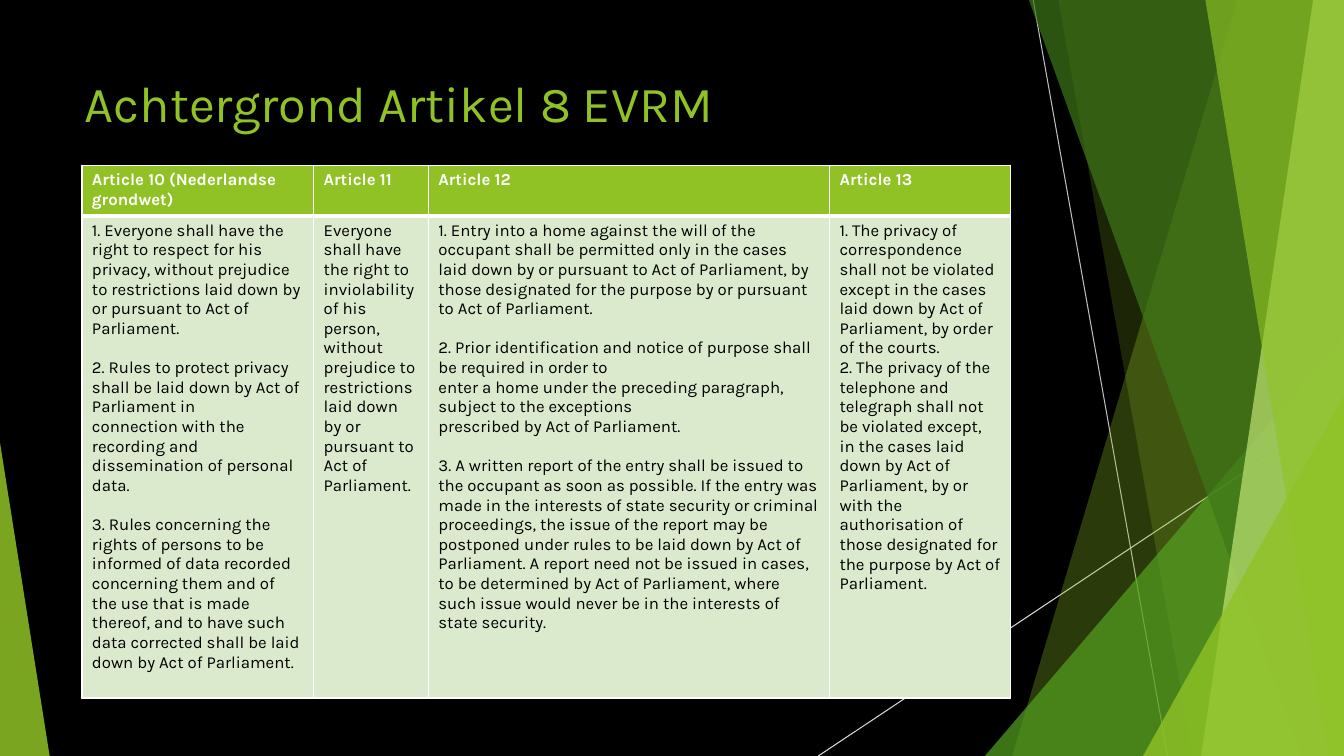
import dataclasses

import pptx
import pptx.dml.color
import pptx.enum.dml
import pptx.enum.shapes
import pptx.enum.text
import pptx.oxml
import pptx.oxml.ns
import pptx.util

Pt = pptx.util.Pt
WIDTH, HEIGHT = 960, 540


@dataclasses.dataclass(frozen=True)
class Theme:
    font: str = "Karla"
    title_size: int = 36
    table_size: int = 12
    background: str = "000000"
    accent: str = "90C226"
    mid_green: str = "54A021"
    dark_green: str = "3F7819"
    light_green: str = "C0E474"
    steep_line: str = "BFBFBF"
    flat_line: str = "D9D9D9"
    white: str = "FFFFFF"
    ink: str = "000000"
    body_fill: str = "DBE9CD"


def rgb(color):
    return pptx.dml.color.RGBColor.from_string(color)


def write_paragraph(paragraph, text, *, font, size, color, bold=False, gap=0):
    paragraph.space_before = Pt(gap)
    run = paragraph.add_run()
    run.text = text
    run.font.name = font
    run.font.size = Pt(size)
    run.font.bold = bold
    run.font.color.rgb = rgb(color)


class Deck:
    def __init__(self, theme):
        self.theme = theme
        self.presentation = pptx.Presentation()
        self.presentation.slide_width = Pt(WIDTH)
        self.presentation.slide_height = Pt(HEIGHT)
        self.slide = self.presentation.slides.add_slide(self.presentation.slide_layouts[6])
        self.slide.background.fill.solid()
        self.slide.background.fill.fore_color.rgb = rgb(theme.background)

    def line(self, start, end, color):
        connector = self.slide.shapes.add_connector(
            pptx.enum.shapes.MSO_CONNECTOR.STRAIGHT, *map(Pt, start + end))
        connector.line.color.rgb = rgb(color)
        connector.line.width = Pt(0.75)
        connector._element.spPr.append(pptx.oxml.parse_xml(
            f'<a:effectLst {pptx.oxml.ns.nsdecls("a")}/>'))

    def tint(self, shape, color, opacity):
        """Give a shape a see-through fill, with no outline or shadow."""
        shape.shadow.inherit = False
        shape.line.fill.background()
        shape.fill.solid()
        shape.fill.fore_color.rgb = rgb(color)
        solid_color = shape._element.spPr.find(".//" + pptx.oxml.ns.qn("a:srgbClr"))
        solid_color.append(pptx.oxml.parse_xml(
            f'<a:alpha {pptx.oxml.ns.nsdecls("a")} val="{opacity * 1000}"/>'))

    def facet(self, top_left, bottom_left, color, opacity):
        """Fill the area from a slanted left edge to the right side of the slide."""
        outline = self.slide.shapes.build_freeform(Pt(top_left), 0, scale=1)
        outline.add_line_segments(
            [(Pt(WIDTH), 0), (Pt(WIDTH), Pt(HEIGHT)), (Pt(bottom_left), Pt(HEIGHT))])
        self.tint(outline.convert_to_shape(), color, opacity)

    def corner(self, left, top, width, apex, color, opacity):
        """Draw a triangle standing on the bottom edge; apex 0 is left, 1 is right."""
        triangle = self.slide.shapes.add_shape(
            pptx.enum.shapes.MSO_SHAPE.ISOSCELES_TRIANGLE,
            Pt(left), Pt(top), Pt(width), Pt(HEIGHT - top))
        triangle.adjustments[0] = apex
        self.tint(triangle, color, opacity)

    def title(self, text, left, top, width, height):
        frame = self.slide.shapes.add_textbox(
            Pt(left), Pt(top), Pt(width), Pt(height)).text_frame
        frame.word_wrap = True
        frame.vertical_anchor = pptx.enum.text.MSO_ANCHOR.TOP
        write_paragraph(frame.paragraphs[0], text, font=self.theme.font,
                        size=self.theme.title_size, color=self.theme.accent)

    def cell(self, cell, blocks, fill, borders, **text_format):
        """Fill a cell with blocks of lines, one empty line's height between blocks."""
        cell.fill.solid()
        cell.fill.fore_color.rgb = rgb(fill)
        properties = cell._tc.get_or_add_tcPr()
        for position, (side, width) in enumerate(zip("LRTB", borders)):
            properties.insert(position, pptx.oxml.parse_xml(
                f'<a:ln{side} {pptx.oxml.ns.nsdecls("a")} w="{Pt(width)}"><a:solidFill>'
                f'<a:srgbClr val="{self.theme.white}"/></a:solidFill></a:ln{side}>'))
        paragraph = cell.text_frame.paragraphs[0]
        for block_index, block in enumerate(blocks):
            for line_index, text in enumerate(block):
                if block_index or line_index:
                    paragraph = cell.text_frame.add_paragraph()
                gap = 14 if block_index and not line_index else 0
                write_paragraph(paragraph, text, font=self.theme.font,
                                size=self.theme.table_size, gap=gap, **text_format)

    def table(self, articles, left, top, widths, heights):
        theme = self.theme
        table = self.slide.shapes.add_table(
            2, len(articles), Pt(left), Pt(top), Pt(sum(widths)), Pt(sum(heights))).table
        table.first_row = table.horz_banding = False
        for row, height in zip(table.rows, heights):
            row.height = Pt(height)
        for index, (heading, blocks) in enumerate(articles.items()):
            table.columns[index].width = Pt(widths[index])
            self.cell(table.cell(0, index), [[heading]], theme.accent, (1, 1, 1, 3),
                      color=theme.white, bold=True)
            self.cell(table.cell(1, index), blocks, theme.body_fill, (1, 1, 3, 1),
                      color=theme.ink)


ARTICLES = {
    "Article 10 (Nederlandse grondwet)": [
        ["1. Everyone shall have the right to respect for his privacy, without prejudice",
         "to restrictions laid down by or pursuant to Act of Parliament."],
        ["2. Rules to protect privacy shall be laid down by Act of Parliament in",
         "connection with the recording and dissemination of personal data."],
        ["3. Rules concerning the rights of persons to be informed of data recorded",
         "concerning them and of the use that is made thereof, and to have such",
         "data corrected shall be laid down by Act of Parliament."],
    ],
    "Article 11": [
        ["Everyone shall have the right to inviolability of his person, without",
         "prejudice to restrictions laid down by or pursuant to Act of Parliament."],
    ],
    "Article 12": [
        ["1. Entry into a home against the will of the occupant shall be permitted only in "
         "the cases laid down by or pursuant to Act of Parliament, by those designated for "
         "the purpose by or pursuant to Act of Parliament."],
        ["2. Prior identification and notice of purpose shall be required in order to",
         "enter a home under the preceding paragraph, subject to the exceptions",
         "prescribed by Act of Parliament."],
        ["3. A written report of the entry shall be issued to the occupant as soon as "
         "possible. If the entry was made in the interests of state security or criminal "
         "proceedings, the issue of the report may be postponed under rules to be laid down "
         "by Act of Parliament. A report need not be issued in cases, to be determined by "
         "Act of Parliament, where such issue would never be in the interests of state "
         "security."],
    ],
    "Article 13": [
        ["1. The privacy of correspondence shall not be violated except in the cases",
         "laid down by Act of Parliament, by order of the courts.",
         "2. The privacy of the telephone and telegraph shall not be violated except,",
         "in the cases laid down by Act of Parliament, by or with the authorisation of",
         "those designated for the purpose by Act of Parliament."],
    ],
}


def main():
    theme = Theme()
    deck = Deck(theme)
    deck.line((738, 0), (834, HEIGHT), theme.steep_line)
    deck.line((WIDTH, 290), (584.5, HEIGHT), theme.flat_line)
    deck.facet(884, 723, theme.accent, 30)
    deck.facet(756, 852, theme.accent, 20)
    deck.corner(703.5, 240, 256.5, 1, theme.mid_green, 72)
    deck.facet(735, 929.5, theme.dark_green, 70)
    deck.facet(938, 858, theme.light_green, 70)
    deck.facet(861, 949, theme.accent, 65)
    deck.corner(816.5, 283, 143.5, 1, theme.accent, 80)
    deck.corner(0, 316, 35.5, 0, theme.accent, 85)
    deck.title("Achtergrond Artikel 8 EVRM", 53.5, 48, 677, 104)
    deck.table(ARTICLES, 58.5, 118, (165.5, 82, 286.5, 129.5), (34.5, 344.5))
    deck.presentation.save("out.pptx")


if __name__ == "__main__":
    main()
